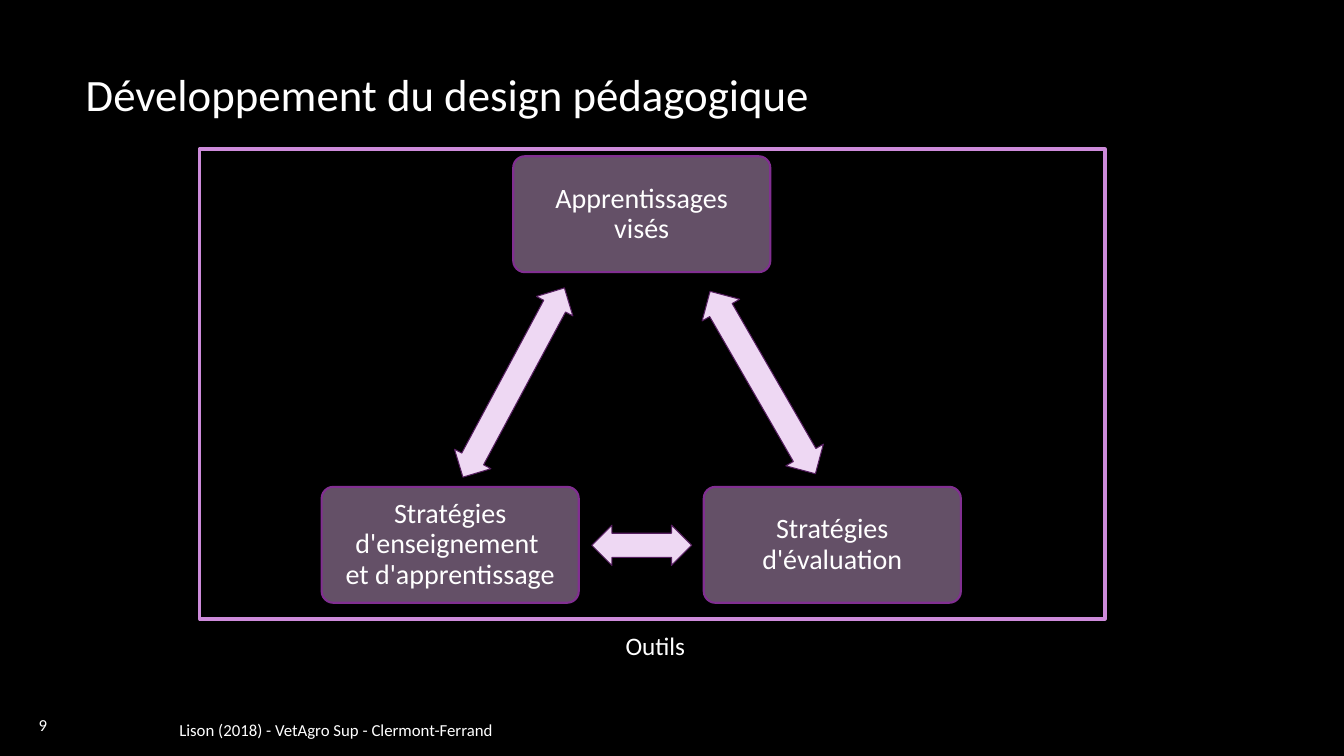
import pptx
import pptx.dml.color
import pptx.enum.shapes
import pptx.enum.text
import pptx.oxml.ns
import pptx.util
from lxml import etree

Inches = pptx.util.Inches
Pt = pptx.util.Pt
SHAPES = pptx.enum.shapes.MSO_SHAPE
ALIGN = pptx.enum.text.PP_ALIGN
ANCHOR = pptx.enum.text.MSO_ANCHOR

COLORS = {
    "background": "000000",
    "text": "FFFFFF",
    "frame": "CD8BDA",
    "box": "DEB2E6",
    "box_line": "812F91",
    "arrow": "EED8F3",
    "arrow_line": "561F60",
}
RGB = {name: pptx.dml.color.RGBColor.from_string(value) for name, value in COLORS.items()}


def write_text(shape, text, size, alignment=ALIGN.LEFT, anchor=ANCHOR.MIDDLE):
    text_frame = shape.text_frame
    text_frame.word_wrap = True
    text_frame.auto_size = pptx.enum.text.MSO_AUTO_SIZE.NONE
    text_frame.vertical_anchor = anchor
    paragraph = text_frame.paragraphs[0]
    paragraph.text = text
    paragraph.alignment = alignment
    for run in paragraph.runs:
        run.font.name = "Calibri"
        run.font.size = Pt(size)
        run.font.color.rgb = RGB["text"]
    return paragraph


def add_outlined_shape(kind, left, top, width, height, line, line_width):
    shape = slide.shapes.add_shape(kind, Inches(left), Inches(top), Inches(width), Inches(height))
    shape.shadow.inherit = False
    shape.fill.background()
    shape.line.color.rgb = RGB[line]
    shape.line.width = Pt(line_width)
    return shape


presentation = pptx.Presentation()
presentation.slide_width = Inches(13.33)
presentation.slide_height = Inches(7.5)
slide = presentation.slides.add_slide(presentation.slide_layouts[5])
slide.background.fill.solid()
slide.background.fill.fore_color.rgb = RGB["background"]

# Title
title = slide.shapes.title
title.left, title.top = Inches(0.75), Inches(0.59)
title.width, title.height = Inches(11.08), Inches(0.67)
write_text(title, "Développement du design pédagogique", 32)

# Frame around the triangle
add_outlined_shape(SHAPES.RECTANGLE, 1.98, 1.48, 8.98, 4.66, "frame", 2.5)

# Translucent boxes at the corners
boxes = [
    (5.09, 1.55, "Apprentissages\vvisés"),
    (6.98, 4.83, "Stratégies\vd'évaluation"),
    (3.19, 4.83, "Stratégies\vd'enseignement \vet d'apprentissage"),
]
for left, top, text in boxes:
    box = add_outlined_shape(SHAPES.ROUNDED_RECTANGLE, left, top, 2.55, 1.15, "box_line", 1.5)
    box.adjustments[0] = 0.1
    box.fill.solid()
    box.fill.fore_color.rgb = RGB["box"]
    fill_color = box.fill._xPr.find(".//" + pptx.oxml.ns.qn("a:srgbClr"))
    etree.SubElement(fill_color, pptx.oxml.ns.qn("a:alpha"), val="45000")
    paragraph = write_text(box, text, 20, ALIGN.CENTER)
    paragraph.line_spacing = 0.9
    text_frame = box.text_frame
    text_frame.margin_left = text_frame.margin_right = Inches(0.11)
    text_frame.margin_top = text_frame.margin_bottom = Inches(0.11)

# Double arrows along the sides
arrows = [
    (6.52, 3.58, 2.09, 0.43, 60),
    (5.87, 5.21, 0.99, 0.40, 180),
    (4.03, 3.59, 2.13, 0.41, 298.2),
]
for left, top, width, height, rotation in arrows:
    arrow = add_outlined_shape(SHAPES.LEFT_RIGHT_ARROW, left, top, width, height, "arrow_line", 0.75)
    arrow.adjustments[0] = 0.6
    arrow.adjustments[1] = 0.5
    arrow.rotation = rotation
    arrow.fill.solid()
    arrow.fill.fore_color.rgb = RGB["arrow"]

# Caption, source and page number
labels = [
    (5.67, 6.20, 1.66, 0.40, "Outils", 18, ALIGN.CENTER, ANCHOR.TOP),
    (1.68, 6.98, 4.28, 0.52, "Lison (2018) - VetAgro Sup - Clermont-Ferrand", 12, ALIGN.LEFT, ANCHOR.MIDDLE),
    (0.18, 6.93, 0.49, 0.52, "9", 12, ALIGN.CENTER, ANCHOR.MIDDLE),
]
for left, top, width, height, text, size, alignment, anchor in labels:
    label = slide.shapes.add_textbox(Inches(left), Inches(top), Inches(width), Inches(height))
    write_text(label, text, size, alignment, anchor)

presentation.save("out.pptx")
